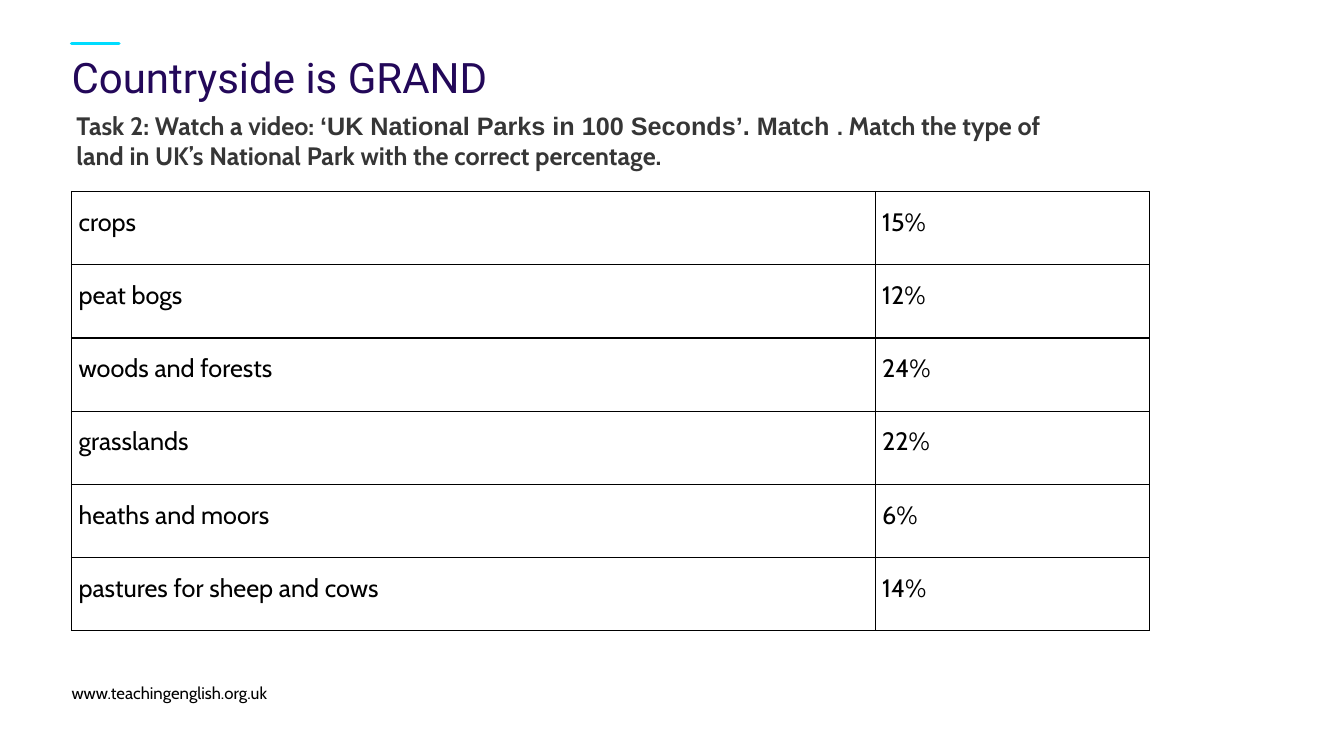
"""Build a slide with a task about land types in national parks."""
from lxml import etree
from pptx import Presentation
from pptx.dml.color import RGBColor
from pptx.enum.shapes import MSO_CONNECTOR
from pptx.enum.text import MSO_ANCHOR, PP_ALIGN
from pptx.oxml.ns import qn
from pptx.util import Inches, Pt

STRAIGHT = MSO_CONNECTOR.STRAIGHT
TOP, BOTTOM = MSO_ANCHOR.TOP, MSO_ANCHOR.BOTTOM
LEFT = PP_ALIGN.LEFT

COLORS = {"accent": "00DCFF", "title": "230859", "task": "363636", "black": "000000"}
TITLE = "Countryside is GRAND"
TASK = [
    ("Task 2: Watch a video: ", "Cabin"),
    ("‘UK National Parks in 100 Seconds’. Match ", "Arial"),
    (". Match the type of land in UK’s National Park with the correct percentage.", "Cabin"),
]
FOOTER = "www.teachingenglish.org.uk"
LAND_TYPES = [
    ("crops", "15%"),
    ("peat bogs", "12%"),
    ("woods and forests", "24%"),
    ("grasslands", "22%"),
    ("heaths and moors", "6%"),
    ("pastures for sheep and cows", "14%"),
]
MARGIN = 0.71
COLUMN_WIDTHS = (7.97, 2.72)
TABLE_HEIGHT = 4.36


def write_text(frame, runs, size, color="black", bold=False, spacing=None, anchor=TOP, inset=None):
    """Fill a text frame with one paragraph of (text, font name) runs."""
    frame.word_wrap = True
    frame.vertical_anchor = anchor
    if inset is not None:
        frame.margin_left = frame.margin_right = Inches(inset)
        frame.margin_top = frame.margin_bottom = 0
    paragraph = frame.paragraphs[0]
    paragraph.alignment = LEFT
    paragraph.line_spacing = spacing
    for text, font_name in runs:
        run = paragraph.add_run()
        run.text = text
        run.font.name = font_name
        run.font.size = Pt(size)
        run.font.bold = bold
        run.font.color.rgb = RGBColor.from_string(COLORS[color])


def add_borders(cell, color="black", width=1):
    """Draw a solid line on all four sides of a table cell."""
    properties = cell._tc.get_or_add_tcPr()
    for position, side in enumerate(("a:lnL", "a:lnR", "a:lnT", "a:lnB")):
        line = etree.Element(qn(side), w=str(Pt(width)))
        fill = etree.SubElement(line, qn("a:solidFill"))
        etree.SubElement(fill, qn("a:srgbClr"), val=COLORS[color])
        properties.insert(position, line)


def add_accent(slide):
    """Draw the short line above the title."""
    accent = slide.shapes.add_connector(
        STRAIGHT, Inches(MARGIN), Inches(0.43), Inches(1.18), Inches(0.43))
    accent.line.color.rgb = RGBColor.from_string(COLORS["accent"])
    accent.line.width = Pt(2.4)
    accent.line._get_or_add_ln().set("cap", "rnd")
    etree.SubElement(accent._element.spPr, qn("a:effectLst"))


def add_title(slide):
    """Place and fill the title placeholder."""
    title = slide.shapes.title
    title.left, title.top = Inches(MARGIN), Inches(0.55)
    title.width, title.height = Inches(11.97), Inches(0.87)
    write_text(title.text_frame, [(TITLE, "Roboto")], 30, "title", spacing=Pt(33), inset=0)


def add_text_box(slide, left, top, width, height, runs, size, **text_format):
    """Add a text box at a place given in inches."""
    box = slide.shapes.add_textbox(Inches(left), Inches(top), Inches(width), Inches(height))
    write_text(box.text_frame, runs, size, **text_format)


def add_land_table(slide):
    """Add the table of land types and percentages."""
    table = slide.shapes.add_table(
        len(LAND_TYPES), len(COLUMN_WIDTHS), Inches(MARGIN), Inches(1.9),
        Inches(sum(COLUMN_WIDTHS)), Inches(TABLE_HEIGHT)).table
    table.first_row = table.horz_banding = False
    for column, width in zip(table.columns, COLUMN_WIDTHS):
        column.width = Inches(width)
    for row, values in zip(table.rows, LAND_TYPES):
        row.height = Inches(TABLE_HEIGHT / len(LAND_TYPES))
        for cell, value in zip(row.cells, values):
            cell.fill.background()
            cell.vertical_anchor = TOP
            cell.margin_left = cell.margin_right = Inches(0.07)
            cell.margin_top = cell.margin_bottom = 0
            write_text(cell.text_frame, [(value, "Cabin")], 18, spacing=1.5)
            add_borders(cell)


def main():
    """Build and save the presentation."""
    presentation = Presentation()
    presentation.slide_width, presentation.slide_height = Inches(13.33), Inches(7.5)
    slide = presentation.slides.add_slide(presentation.slide_layouts[5])
    add_accent(slide)
    add_title(slide)
    add_text_box(slide, MARGIN, 6.77, 11.42, 0.2, [(FOOTER, "Cabin")], 12, anchor=BOTTOM, inset=0)
    add_text_box(slide, 0.66, 1.04, 9.9, 0.71, TASK, 18, color="task", bold=True)
    add_land_table(slide)
    presentation.save("out.pptx")


if __name__ == "__main__":
    main()
